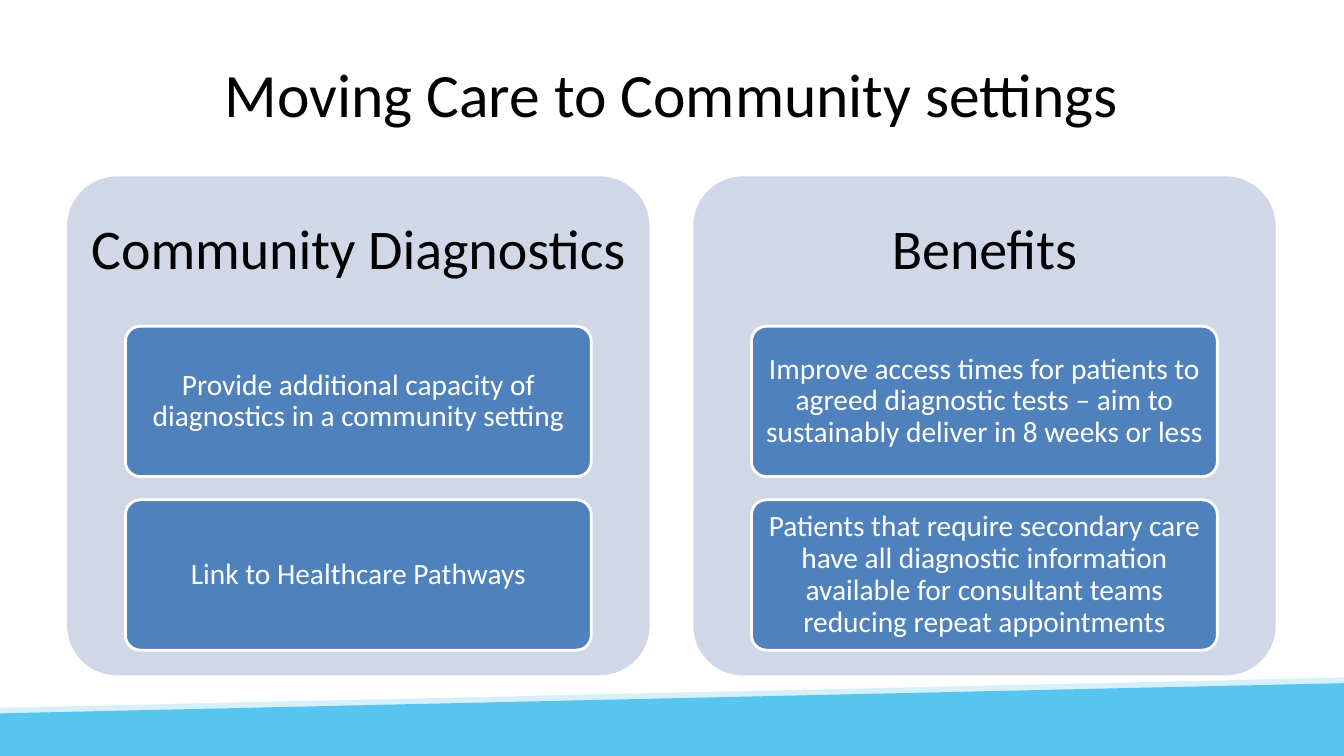
from pptx import Presentation
from pptx.dml.color import RGBColor
from pptx.enum.shapes import MSO_SHAPE
from pptx.enum.text import MSO_ANCHOR, PP_ALIGN
from pptx.util import Pt

SLIDE_WIDTH, SLIDE_HEIGHT = 960, 540
BLACK, WHITE = "000000", "FFFFFF"
PALE_BAND, BRIGHT_BAND = "D5F0FB", "58C4F0"
PANEL_FILL, CARD_FILL = "D0D8E8", "4F81BD"

PANEL_LEFT, PANEL_TOP, PANEL_WIDTH, PANEL_HEIGHT = 48, 126, 416, 356.4
PANEL_PITCH = 447.2
HEADING_HEIGHT = 106.8
CARD_INDENT, CARD_TOP, CARD_HEIGHT, CARD_PITCH = 41.6, 233, 107.4, 124
CARD_WIDTH = PANEL_WIDTH - 2 * CARD_INDENT

COLUMNS = [
    ("Community Diagnostics", [
        "Provide additional capacity of diagnostics in a community setting",
        "Link to Healthcare Pathways",
    ]),
    ("Benefits", [
        "Improve access times for patients to agreed diagnostic tests – aim to "
        "sustainably deliver in 8 weeks or less",
        "Patients that require secondary care have all diagnostic information "
        "available for consultant teams reducing repeat appointments",
    ]),
]


def color(value):
    return RGBColor.from_string(value)


def write_text(shape, text, *, size, ink=BLACK, font="Calibri", spacing=1.0,
               inset=(7.2, 3.6)):
    frame = shape.text_frame
    frame.word_wrap = True
    frame.vertical_anchor = MSO_ANCHOR.MIDDLE
    frame.margin_left = frame.margin_right = Pt(inset[0])
    frame.margin_top = frame.margin_bottom = Pt(inset[1])
    paragraph = frame.paragraphs[0]
    paragraph.text = text
    paragraph.alignment = PP_ALIGN.CENTER
    paragraph.line_spacing = spacing
    paragraph.font.name = font
    paragraph.font.size = Pt(size)
    paragraph.font.color.rgb = color(ink)


class SlideBuilder:
    def __init__(self, slide):
        self.slide = slide

    def paint(self, shape, fill, line=None):
        shape.shadow.inherit = False
        shape.fill.solid()
        shape.fill.fore_color.rgb = color(fill)
        if line:
            shape.line.color.rgb = color(line)
            shape.line.width = Pt(2)
        else:
            shape.line.fill.background()

    def band(self, left_top, right_top, fill):
        corners = [(0, left_top), (SLIDE_WIDTH, right_top),
                   (SLIDE_WIDTH, SLIDE_HEIGHT), (0, SLIDE_HEIGHT)]
        points = [(Pt(x), Pt(y)) for x, y in corners]
        builder = self.slide.shapes.build_freeform(*points[0], scale=1.0)
        builder.add_line_segments(points[1:], close=True)
        self.paint(builder.convert_to_shape(), fill)

    def rounded(self, left, top, width, height, fill, line=None):
        shape = self.slide.shapes.add_shape(
            MSO_SHAPE.ROUNDED_RECTANGLE, Pt(left), Pt(top), Pt(width), Pt(height))
        shape.adjustments[0] = 0.1
        self.paint(shape, fill, line)
        return shape

    def label(self, left, top, width, height, text, **text_format):
        box = self.slide.shapes.add_textbox(Pt(left), Pt(top), Pt(width), Pt(height))
        write_text(box, text, **text_format)


def main():
    presentation = Presentation()
    presentation.slide_width = Pt(SLIDE_WIDTH)
    presentation.slide_height = Pt(SLIDE_HEIGHT)
    builder = SlideBuilder(presentation.slides.add_slide(presentation.slide_layouts[6]))

    # Sloping bands along the bottom
    builder.band(505.6, 484, PALE_BAND)
    builder.band(509.6, 488, BRIGHT_BAND)

    # Title
    builder.label(48, 21.6, 864, 90, "Moving Care to Community settings", size=44)

    # Panels, each with a heading and its cards
    for column, (heading, cards) in enumerate(COLUMNS):
        left = PANEL_LEFT + column * PANEL_PITCH
        builder.rounded(left, PANEL_TOP, PANEL_WIDTH, PANEL_HEIGHT, PANEL_FILL)
        builder.label(left, PANEL_TOP, PANEL_WIDTH, HEADING_HEIGHT, heading,
                      size=40, spacing=0.9, inset=(12, 12))
        for row, text in enumerate(cards):
            card = builder.rounded(left + CARD_INDENT, CARD_TOP + row * CARD_PITCH,
                                   CARD_WIDTH, CARD_HEIGHT, CARD_FILL, WHITE)
            write_text(card, text, size=21, ink=WHITE, spacing=0.9, inset=(4.2, 3))

    presentation.save("out.pptx")


if __name__ == "__main__":
    main()
